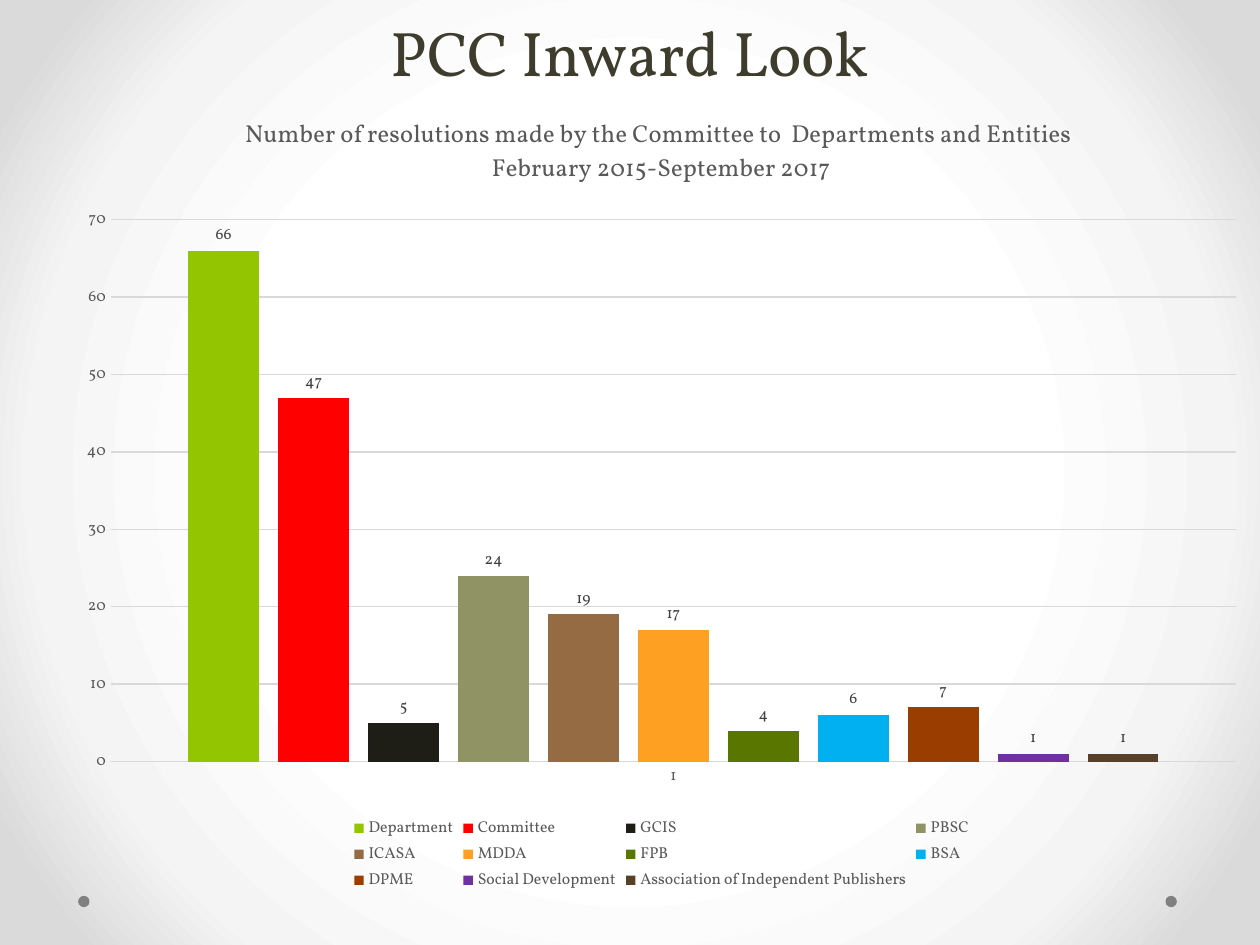
from pptx import Presentation
from pptx.chart.data import CategoryChartData
from pptx.dml.color import RGBColor
from pptx.enum.chart import XL_CHART_TYPE as Chart, XL_LABEL_POSITION as LabelPos
from pptx.enum.chart import XL_LEGEND_POSITION as LegendPos, XL_TICK_MARK as Tick
from pptx.enum.shapes import MSO_SHAPE as Shape
from pptx.enum.text import MSO_ANCHOR as Anchor, MSO_AUTO_SIZE as AutoSize, PP_ALIGN as Align
from pptx.oxml import parse_xml
from pptx.oxml.ns import nsdecls, qn
from pptx.util import Inches, Pt

FONT = "Vollkorn"
TITLE = RGBColor(0x3E, 0x3D, 0x2D)
TEXT = RGBColor(0x59, 0x59, 0x59)
LABEL = RGBColor(0x40, 0x40, 0x40)
GRID = RGBColor(0xD9, 0xD9, 0xD9)
DOT = RGBColor(0x80, 0x80, 0x80)
BLACK = RGBColor(0x00, 0x00, 0x00)
BACKGROUND = [(50, "FFFFFF"), (76, "F4F4F4"), (92, "DADADA")]

RESOLUTIONS = [
    ("Department", 66, RGBColor(0x94, 0xC6, 0x00)),
    ("Committee", 47, RGBColor(0xFF, 0x00, 0x00)),
    ("GCIS", 5, RGBColor(0x1F, 0x1E, 0x16)),
    ("PBSC", 24, RGBColor(0x90, 0x94, 0x65)),
    ("ICASA", 19, RGBColor(0x95, 0x6B, 0x43)),
    ("MDDA", 17, RGBColor(0xFE, 0xA0, 0x22)),
    ("FPB", 4, RGBColor(0x59, 0x77, 0x00)),
    ("BSA", 6, RGBColor(0x00, 0xB0, 0xF0)),
    ("DPME", 7, RGBColor(0x99, 0x3E, 0x00)),
    ("Social Development", 1, RGBColor(0x70, 0x30, 0xA0)),
    ("Association of Independent Publishers", 1, RGBColor(0x59, 0x40, 0x28)),
]
CHART_TITLE = (
    "Number of resolutions made by the Committee to  Departments and Entities \n"
    "February 2015-September 2017"
)


class SlideBuilder:
    def __init__(self, prs):
        self.s = prs.slides.add_slide(prs.slide_layouts[5])

    def style(self, font, size, color):
        font.name = FONT
        font.size = Pt(size)
        font.bold = False
        font.color.rgb = color

    def line(self, fmt):
        fmt.line.color.rgb = GRID
        fmt.line.width = Pt(0.75)

    def background(self, stops):
        self.s.background.fill.gradient()
        grad = self.s.element.find(".//" + qn("a:gradFill"))
        gs = "".join(
            f'<a:gs pos="{pos * 1000}"><a:srgbClr val="{color}"/></a:gs>'
            for pos, color in stops
        )
        grad.getparent().replace(grad, parse_xml(
            f'<a:gradFill {nsdecls("a")} rotWithShape="1"><a:gsLst>{gs}</a:gsLst>'
            '<a:path path="circle"><a:fillToRect l="50000" t="50000" r="50000" b="50000"/>'
            "</a:path></a:gradFill>"
        ))

    def dot(self, left, top, size):
        sp = self.s.shapes.add_shape(
            Shape.OVAL, Inches(left), Inches(top), Inches(size), Inches(size))
        sp.shadow.inherit = False
        sp.fill.solid()
        sp.fill.fore_color.rgb = DOT
        sp.line.fill.background()

    def title(self, text, left, top, width, height):
        sp = self.s.shapes.title
        sp.left, sp.top = Inches(left), Inches(top)
        sp.width, sp.height = Inches(width), Inches(height)
        tf = sp.text_frame
        tf.text = text
        tf.auto_size = AutoSize.NONE
        tf.vertical_anchor = Anchor.BOTTOM
        p = tf.paragraphs[0]
        p.alignment = Align.CENTER
        self.style(p.runs[0].font, 36, TITLE)

    def column_chart(self, title, rows, left, top, width, height):
        data = CategoryChartData()
        data.categories = ["1"]
        for name, value, _ in rows:
            data.add_series(name, [value])
        chart = self.s.shapes.add_chart(
            Chart.COLUMN_CLUSTERED, Inches(left), Inches(top),
            Inches(width), Inches(height), data).chart
        self.style(chart.font, 10, BLACK)

        tf = chart.chart_title.text_frame
        tf.text = title
        for p in tf.paragraphs:
            self.style(p.runs[0].font, 14, TEXT)
        chart.chart_title.include_in_layout = False

        chart.has_legend = True
        chart.legend.position = LegendPos.BOTTOM
        chart.legend.include_in_layout = False
        self.style(chart.legend.font, 9, TEXT)

        for axis in (chart.category_axis, chart.value_axis):
            axis.major_tick_mark = axis.minor_tick_mark = Tick.NONE
            self.style(axis.tick_labels.font, 9, TEXT)
        self.line(chart.category_axis.format)
        self.line(chart.value_axis.major_gridlines.format)
        chart.value_axis.format.line.fill.background()

        plot = chart.plots[0]
        plot.vary_by_categories = False
        plot.gap_width = 219
        plot.overlap = -27
        for series, (_, _, color) in zip(plot.series, rows):
            series.format.fill.solid()
            series.format.fill.fore_color.rgb = color
            labels = series.data_labels
            labels.show_value = True
            labels.position = LabelPos.OUTSIDE_END
            self.style(labels.font, 9, LABEL)


def main():
    prs = Presentation()
    prs.slide_width, prs.slide_height = Inches(10), Inches(7.5)
    slide = SlideBuilder(prs)
    slide.background(BACKGROUND)
    for left in (9.25, 0.62):
        slide.dot(left, 7.11, 0.09)
    slide.title("PCC Inward Look", 0.5, 0, 9, 0.76)
    slide.column_chart(CHART_TITLE, RESOLUTIONS, 0.5, 0.71, 9.5, 6.4)
    prs.save("out.pptx")


if __name__ == "__main__":
    main()
